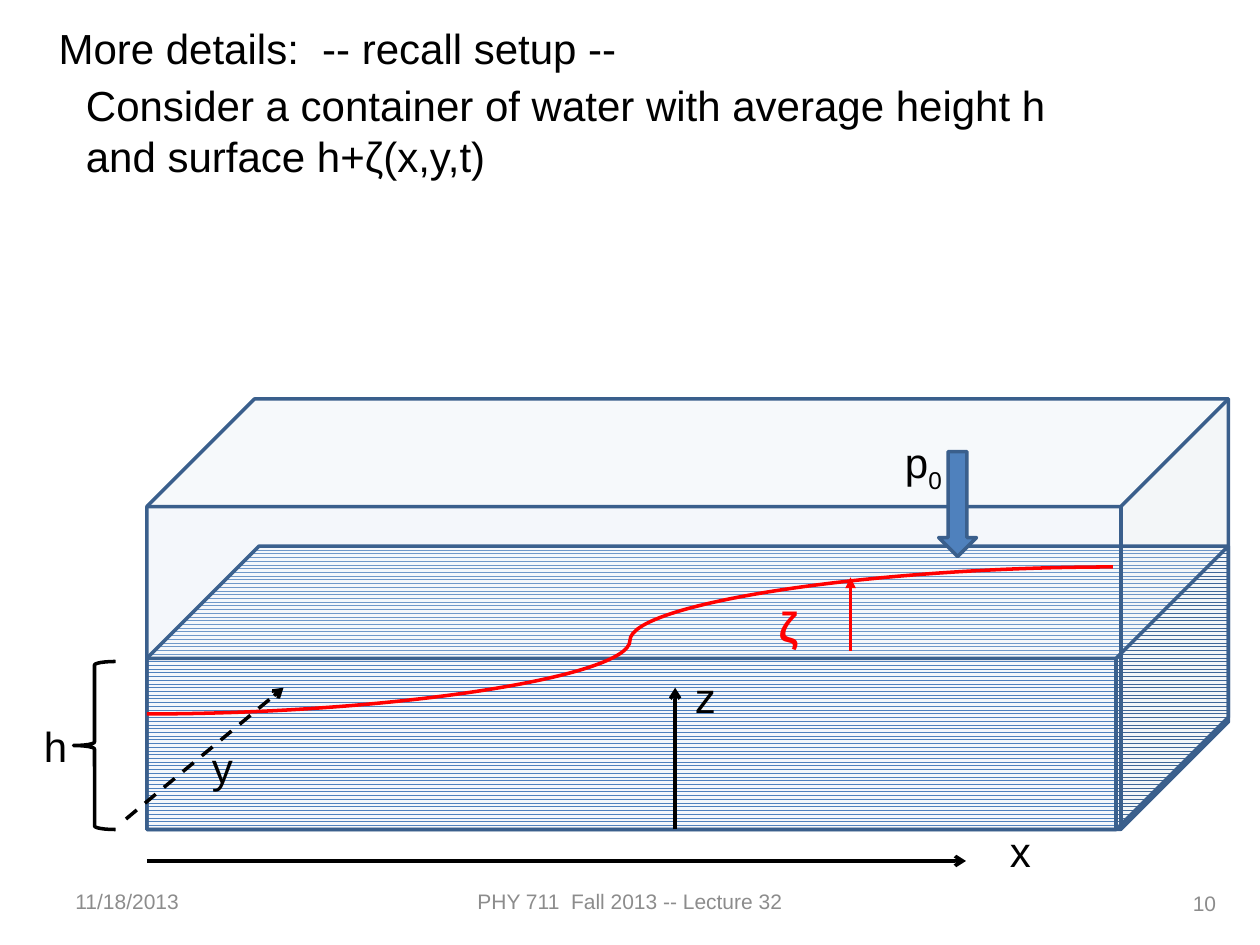
from dataclasses import dataclass

from lxml import etree
from pptx import Presentation, util as u
from pptx.dml.color import RGBColor
from pptx.enum import dml, shapes, text
from pptx.oxml.ns import qn

CELL = 1 / 12  # inches: the slide is a grid of 120 columns by 90 rows
BLACK, RED, GREY = "000000", "FF0000", "8C8C8C"
WATER, EDGE, WHITE = "4F81BD", "3A5F8C", "FFFFFF"
LEFT, CENTER, RIGHT = text.PP_ALIGN.LEFT, text.PP_ALIGN.CENTER, text.PP_ALIGN.RIGHT
STRAIGHT, CURVE = shapes.MSO_CONNECTOR.STRAIGHT, shapes.MSO_CONNECTOR.CURVE


@dataclass
class Area:
    column: float
    row: float
    columns: float
    rows: float

    def lengths(self) -> list:
        return [cells(n) for n in (self.column, self.row, self.columns, self.rows)]


@dataclass
class Label:
    words: str
    area: Area
    color: str = BLACK
    bold: bool = False
    subscript: str = ""


@dataclass
class Footer:
    words: str
    area: Area
    align: text.PP_ALIGN


@dataclass
class Stroke:
    start: tuple[float, float]
    end: tuple[float, float]
    color: str = BLACK
    head: str = "arrow"
    dashed: bool = False
    kind: shapes.MSO_CONNECTOR = STRAIGHT


FOOTERS = [
    Footer("11/18/2013", Area(6, 83.4, 28, 4.8), LEFT),
    Footer("PHY 711  Fall 2013 -- Lecture 32", Area(41, 83.4, 38, 4.8), CENTER),
    Footer("10", Area(89, 83.6, 28, 4.8), RIGHT),
]
STROKES = [
    Stroke((64.3, 79), (64.3, 65.5)),
    Stroke((14, 82), (92, 82)),
    Stroke((14, 68), (106, 54), RED, head="", kind=CURVE),
    Stroke((81, 62), (81, 55), RED, head="triangle"),
    Stroke((12, 78), (27, 65.5), dashed=True),
]
LABELS = [
    Label("p", Area(85, 41, 21, 6), subscript="0"),
    Label("h", Area(3, 68, 9, 6)),
    Label("z", Area(65, 63.4, 8, 6)),
    Label("x", Area(95, 78, 8, 6)),
    Label("ζ", Area(73, 56.6, 6, 6), RED, bold=True),
    Label("Consider a container of water with average height h and surface h+ζ(x,y,t)",
          Area(7, 7, 99, 10.9)),
    Label("y", Area(19, 70, 8, 6)),
    Label("More details:  -- recall setup --", Area(4.4, 1.6, 91, 6)),
]


def cells(count: float) -> u.Length:
    return u.Inches(count * CELL)


def paint(target, color: str) -> None:
    target.rgb = RGBColor.from_string(color)


def outline(item, color: str) -> None:
    paint(item.line.color, color)
    item.line.width = u.Pt(2)


def write(page, words: str, area: Area, size: float, color: str):
    """Add a wrapped text box and return its frame and its paragraph."""
    frame = page.shapes.add_textbox(*area.lengths()).text_frame
    frame.word_wrap = True
    para = frame.paragraphs[0]
    para.text = words
    para.font.size = u.Pt(size)
    style(para.runs[0], size, color)
    return frame, para


def style(span, size: float, color: str) -> None:
    span.font.name = "Arial"
    span.font.size = u.Pt(size)
    paint(span.font.color, color)


def draw_footer(page, footer: Footer) -> None:
    frame, para = write(page, footer.words, footer.area, 12, GREY)
    frame.vertical_anchor = text.MSO_ANCHOR.MIDDLE
    para.alignment = footer.align


def draw_label(page, label: Label) -> None:
    frame, para = write(page, label.words, label.area, 24, label.color)
    frame.auto_size = text.MSO_AUTO_SIZE.SHAPE_TO_FIT_TEXT
    para.runs[0].font.bold = label.bold
    if label.subscript:
        span = para.add_run()
        span.text = label.subscript
        style(span, 24, label.color)
        span.font._element.set("baseline", "-25000")


def draw_stroke(page, stroke: Stroke) -> None:
    ends = [cells(n) for n in (*stroke.start, *stroke.end)]
    line = page.shapes.add_connector(stroke.kind, *ends)
    outline(line, stroke.color)
    if stroke.dashed:
        line.line.dash_style = dml.MSO_LINE.DASH
    if stroke.head:
        etree.SubElement(line.line._get_or_add_ln(), qn("a:tailEnd"), type=stroke.head)
    etree.SubElement(line._element.spPr, qn("a:effectLst"))


def add_outlined(page, kind: shapes.MSO_SHAPE, area: Area, color: str):
    shape = page.shapes.add_shape(kind, *area.lengths())
    shape.shadow.inherit = False
    outline(shape, color)
    return shape


def draw_container(page) -> None:
    water = add_outlined(page, shapes.MSO_SHAPE.CUBE, Area(14, 52, 103, 27), EDGE)
    water.adjustments[0] = 0.396
    water.fill.patterned()
    water.fill.pattern = dml.MSO_PATTERN.ZIG_ZAG
    paint(water.fill.fore_color, WATER)
    paint(water.fill.back_color, WHITE)

    glass = add_outlined(page, shapes.MSO_SHAPE.CUBE, Area(14, 38, 103, 41), EDGE)
    glass.fill.solid()
    paint(glass.fill.fore_color, WATER)
    tint = glass._element.spPr.find(qn("a:solidFill"))[0]
    etree.SubElement(tint, qn("a:alpha"), val="6000")


def draw_pressure_and_height(page) -> None:
    pressure = add_outlined(page, shapes.MSO_SHAPE.DOWN_ARROW, Area(89.4, 43, 3.6, 10), EDGE)
    pressure.fill.solid()
    paint(pressure.fill.fore_color, WATER)
    height = add_outlined(page, shapes.MSO_SHAPE.LEFT_BRACE, Area(7, 63, 4, 16), BLACK)
    height.fill.background()


def main() -> None:
    deck = Presentation()
    deck.slide_width, deck.slide_height = cells(120), cells(90)
    page = deck.slides.add_slide(deck.slide_layouts[6])
    for footer in FOOTERS:
        draw_footer(page, footer)
    draw_container(page)
    draw_pressure_and_height(page)
    for stroke in STROKES:
        draw_stroke(page, stroke)
    for label in LABELS:
        draw_label(page, label)
    deck.save("out.pptx")


if __name__ == "__main__":
    main()
